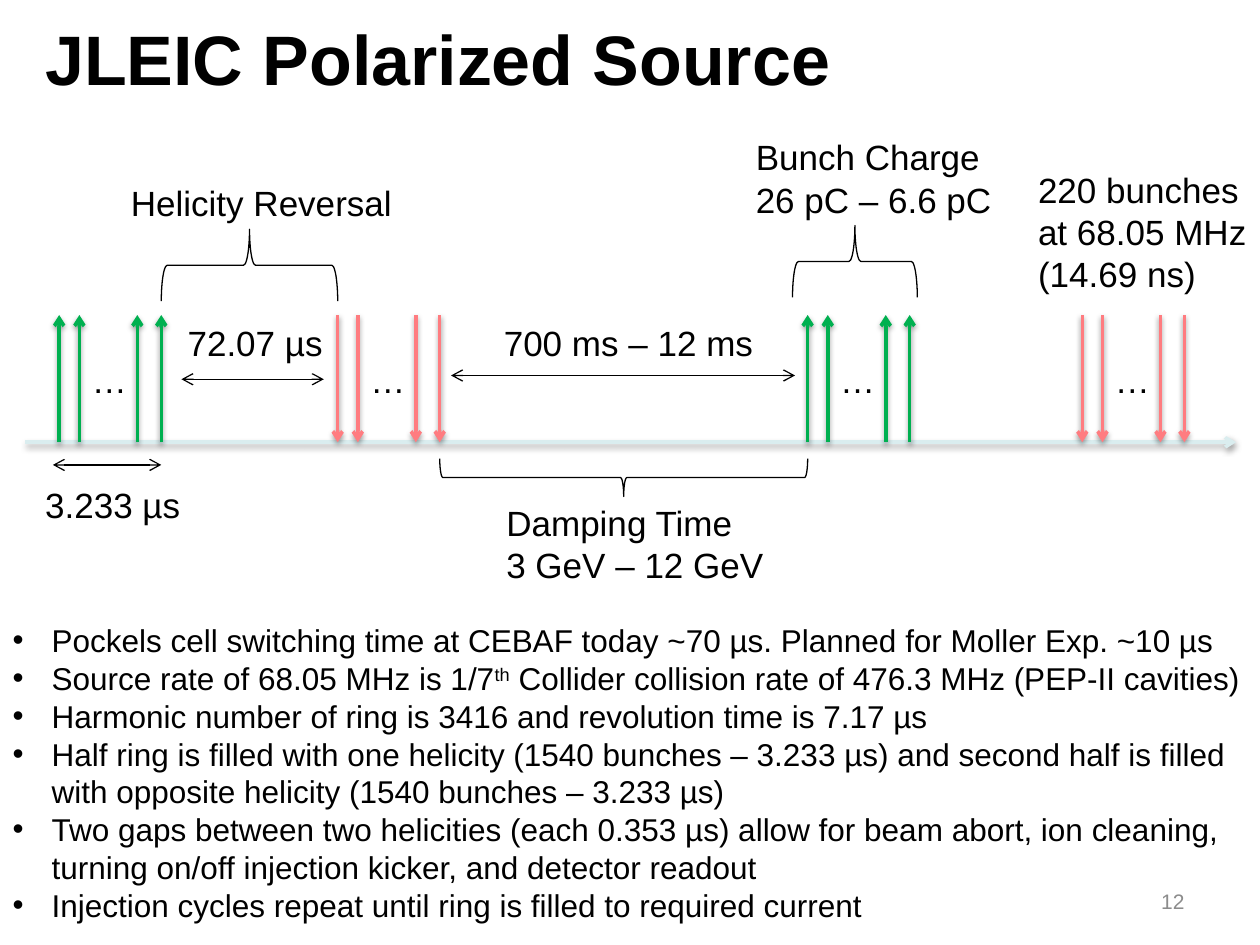
from lxml import etree
from pptx import Presentation
from pptx.dml.color import RGBColor
from pptx.enum.shapes import MSO_CONNECTOR, MSO_SHAPE
from pptx.enum.text import MSO_ANCHOR, MSO_AUTO_SIZE, PP_ALIGN
from pptx.oxml.ns import qn
from pptx.util import Inches, Pt

STRAIGHT = MSO_CONNECTOR.STRAIGHT
LEFT_BRACE = MSO_SHAPE.LEFT_BRACE
MIDDLE = MSO_ANCHOR.MIDDLE
NO_AUTOFIT = MSO_AUTO_SIZE.NONE
LEFT, RIGHT = PP_ALIGN.LEFT, PP_ALIGN.RIGHT

FONT = "Arial"
COLORS = {
    "text": "000000",
    "axis": "DAEDEF",
    "up": "00B050",
    "down": "FF7C80",
    "number": "8C8C8C",
}

TITLE = "JLEIC Polarized Source"
BULLETS = [
    ["Pockels cell switching time at CEBAF today ~70 µs. Planned for Moller Exp. ~10 µs"],
    ["Source rate of 68.05 MHz is 1/7", "th",
     " Collider collision rate of 476.3 MHz (PEP-II cavities)"],
    ["Harmonic number of ring is 3416 and revolution time is 7.17 µs"],
    ["Half ring is filled with one helicity (1540 bunches – 3.233 µs) and second half "
     "is filled with opposite helicity (1540 bunches – 3.233 µs)"],
    ["Two gaps between two helicities (each 0.353 µs) allow for beam abort, ion cleaning, "
     "turning on/off injection kicker, and detector readout"],
    ["Injection cycles repeat until ring is filled to required current"],
]
LABELS = [
    (["Helicity Reversal"], 0.94, 1.39, 2.29),
    (["72.07 µs"], 1.39, 2.5, 1.28),
    (["Damping Time", "3 GeV – 12 GeV"], 3.92, 3.93, 2.26),
    (["700 ms – 12 ms"], 3.9, 2.5, 2.19),
    (["3.233 µs"], 0.26, 3.79, 1.28),
    (["Bunch Charge", "26 pC – 6.6 pC"], 5.9, 1.03, 2.16),
    (["220 bunches", "at 68.05 MHz", "(14.69 ns)"], 8.14, 1.29, 1.87),
]
TRAINS = [(0.47, "up"), (6.41, "up"), (2.68, "down"), (8.59, "down")]
BUNCH_OFFSETS = [0, 0.16, 0.62, 0.81]
AXIS_Y, BUNCH_TOP = 3.51, 2.5
INTERVALS = [(1.44, 2.57, 3.01), (3.58, 6.31, 2.98), (0.42, 1.28, 3.69)]
BRACES = [
    (3.49, 6.41, 3.64, 0.3, 270),
    (1.28, 2.68, 1.82, 0.57, 90),
    (6.29, 7.28, 1.79, 0.57, 90),
]


def color(name):
    return RGBColor.from_string(COLORS[name])


def add_run(paragraph, text, size, name="text", bold=False):
    run = paragraph.add_run()
    run.text = text
    run.font.name = FONT
    run.font.size = Pt(size)
    run.font.bold = bold
    run.font.color.rgb = color(name)
    return run


def add_line(slide, start, end, name, width, ends, shadow=False):
    line = slide.shapes.add_connector(STRAIGHT, *map(Inches, start + end))
    line.line.color.rgb = color(name)
    line.line.width = Pt(width)
    properties = line._element.spPr
    outline = properties.find(qn("a:ln"))
    for arrow_end in ends:
        etree.SubElement(outline, qn(f"a:{arrow_end}"), type="arrow")
    effects = etree.SubElement(properties, qn("a:effectLst"))
    if shadow:
        outer = etree.SubElement(effects, qn("a:outerShdw"), blurRad=str(Pt(3.1)),
                                 dist=str(Pt(1.6)), dir="5400000", rotWithShape="0")
        tint = etree.SubElement(outer, qn("a:srgbClr"), val=COLORS["text"])
        etree.SubElement(tint, qn("a:alpha"), val="38000")


def add_label(slide, lines, left, top, width):
    height = 0.1 + 0.34 * len(lines)
    box = slide.shapes.add_textbox(*map(Inches, (left, top, width, height)))
    frame = box.text_frame
    frame.word_wrap = False
    for index, text in enumerate(lines):
        paragraph = frame.add_paragraph() if index else frame.paragraphs[0]
        add_run(paragraph, text, 20)


def add_brace(slide, left, right, top, depth, rotation):
    span = right - left
    x = (left + right - depth) / 2
    y = top + (depth - span) / 2
    brace = slide.shapes.add_shape(LEFT_BRACE, *map(Inches, (x, y, depth, span)))
    brace.rotation = rotation
    brace.shadow.inherit = False
    brace.fill.background()
    brace.line.color.rgb = color("text")
    brace.line.width = Pt(0.75)


def place(shape, left, top, width, height):
    shape.left, shape.top, shape.width, shape.height = map(
        Inches, (left, top, width, height))


def add_title(slide):
    title = slide.shapes.title
    place(title, 0.26, 0, 9.48, 0.92)
    title.text_frame.vertical_anchor = MIDDLE
    title.text_frame.auto_size = NO_AUTOFIT
    paragraph = title.text_frame.paragraphs[0]
    paragraph.alignment = LEFT
    add_run(paragraph, TITLE, 40, bold=True)


def add_bullets(slide):
    body = slide.placeholders[1]
    place(body, 0, 4.88, 10.01, 2.52)
    frame = body.text_frame
    frame.auto_size = NO_AUTOFIT
    for index, parts in enumerate(BULLETS):
        paragraph = frame.add_paragraph() if index else frame.paragraphs[0]
        paragraph.space_before = Pt(0)
        properties = paragraph._p.get_or_add_pPr()
        properties.set("marL", str(Inches(0.31)))
        properties.set("indent", str(Inches(-0.31)))
        etree.SubElement(properties, qn("a:buFont"), typeface=FONT)
        etree.SubElement(properties, qn("a:buChar"), char="•")
        for text in parts:
            run = add_run(paragraph, text, 18)
            if text == "th":
                run._r.get_or_add_rPr().set("baseline", "30000")


def add_slide_number(slide):
    box = slide.shapes.add_textbox(*map(Inches, (7.17, 6.95, 2.33, 0.4)))
    box.text_frame.word_wrap = True
    box.text_frame.vertical_anchor = MIDDLE
    paragraph = box.text_frame.paragraphs[0]
    paragraph.alignment = RIGHT
    add_run(paragraph, "12", 12, "number")


def main():
    presentation = Presentation()
    presentation.slide_width = Inches(10)
    presentation.slide_height = Inches(7.5)
    slide = presentation.slides.add_slide(presentation.slide_layouts[1])

    add_title(slide)
    add_line(slide, (0.2, AXIS_Y), (9.81, AXIS_Y), "axis", 2, ["tailEnd"], shadow=True)
    for left, helicity in TRAINS:
        arrow_end = "tailEnd" if helicity == "up" else "headEnd"
        for offset in BUNCH_OFFSETS:
            x = left + offset
            add_line(slide, (x, AXIS_Y), (x, BUNCH_TOP), helicity, 2, [arrow_end], shadow=True)
        add_label(slide, ["…"], left + BUNCH_OFFSETS[1], 2.8, 0.48)
    for left, right, y in INTERVALS:
        add_line(slide, (left, y), (right, y), "text", 0.75, ["headEnd", "tailEnd"])
    for brace in BRACES:
        add_brace(slide, *brace)
    for label in LABELS:
        add_label(slide, *label)
    add_slide_number(slide)
    add_bullets(slide)

    presentation.save("out.pptx")


if __name__ == "__main__":
    main()
